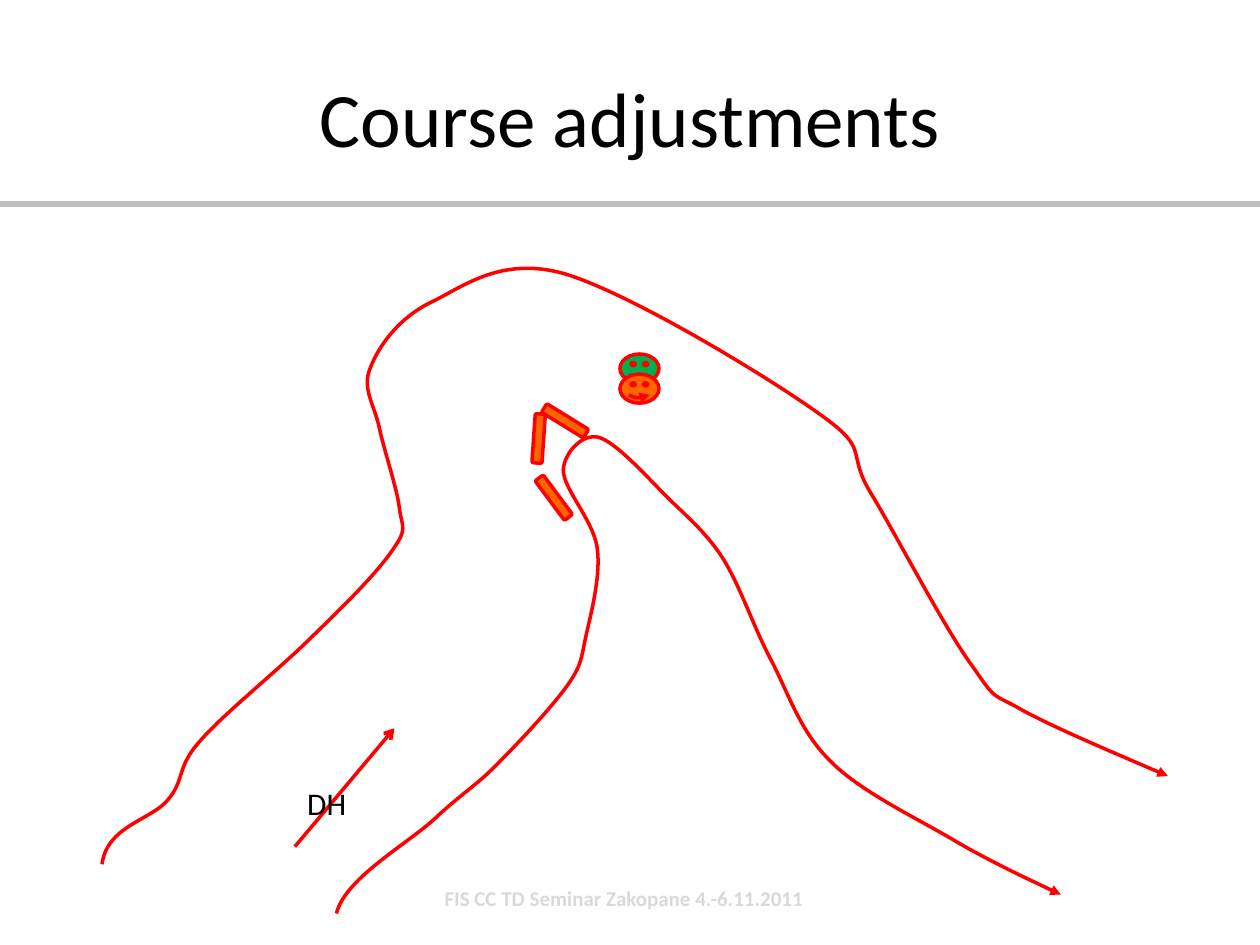
"""Build the course adjustments slide with its two course edges and barriers."""
import pptx
import pptx.dml.color
import pptx.enum.shapes
import pptx.enum.text
import pptx.oxml.ns
import pptx.util
import lxml.etree

WIDTH, HEIGHT = 10, 7.5
RED, ORANGE, GREEN, GREY = "FF0000", "FF6600", "00B050", "BFBFBF"
SHAPES = pptx.enum.shapes.MSO_SHAPE
RULE_TOP = 1.62

COURSE_EDGES = [
    [
        (0.81, 6.86),
        (0.85, 6.55), (1.21, 6.51), (1.34, 6.34),
        (1.47, 6.18), (1.4, 6.09), (1.59, 5.88),
        (1.77, 5.67), (2.22, 5.31), (2.47, 5.06),
        (2.73, 4.81), (3, 4.54), (3.12, 4.36),
        (3.24, 4.19), (3.19, 4.19), (3.17, 4.03),
        (3.15, 3.87), (3.05, 3.58), (3.01, 3.39),
        (2.97, 3.21), (2.87, 3.08), (2.94, 2.92),
        (3, 2.76), (3.15, 2.54), (3.4, 2.41),
        (3.66, 2.29), (3.96, 2.03), (4.47, 2.17),
        (4.99, 2.32), (6.11, 3), (6.51, 3.29),
        (6.92, 3.58), (6.71, 3.58), (6.91, 3.91),
        (7.11, 4.24), (7.51, 5.01), (7.72, 5.29),
        (7.92, 5.58), (7.86, 5.49), (8.12, 5.64),
        (8.38, 5.78), (8.83, 5.97), (9.27, 6.16),
    ],
    [
        (2.67, 7.25),
        (2.74, 6.96), (3.27, 6.68), (3.48, 6.47),
        (3.7, 6.27), (3.8, 6.22), (3.97, 6.04),
        (4.14, 5.87), (4.39, 5.6), (4.51, 5.43),
        (4.62, 5.27), (4.61, 5.23), (4.65, 5.05),
        (4.69, 4.87), (4.77, 4.57), (4.74, 4.35),
        (4.71, 4.13), (4.47, 3.88), (4.47, 3.73),
        (4.48, 3.59), (4.62, 3.44), (4.75, 3.47),
        (4.89, 3.51), (5.13, 3.78), (5.29, 3.94),
        (5.45, 4.1), (5.59, 4.21), (5.73, 4.42),
        (5.87, 4.64), (5.97, 4.95), (6.11, 5.22),
        (6.25, 5.48), (6.34, 5.79), (6.58, 6.03),
        (6.81, 6.27), (7.23, 6.47), (7.54, 6.65),
        (7.84, 6.83), (8.42, 7.1), (8.42, 7.1),
    ],
]
BARRIER_SIZE = (0.39, 0.08)
BARRIERS = [(4.2, 3.91, 53.3), (4.08, 3.44, 94), (4.29, 3.3, 31.6)]
OFFICIAL_SIZE = (0.31, 0.23)
OFFICIALS = [(4.92, 2.81, GREEN), (4.92, 2.97, ORANGE)]


def inches(*values):
    """Convert lengths in inches to slide units."""
    return [pptx.util.Inches(value) for value in values]


def color(hex_text):
    """Return the colour for a hex string."""
    return pptx.dml.color.RGBColor.from_string(hex_text)


def add_element(parent, name, **attributes):
    """Append a drawing element to a parent element."""
    return lxml.etree.SubElement(parent, pptx.oxml.ns.qn(name), attributes)


def style_line(line, hex_text, points=2, arrow=None):
    """Set a line's colour, width and end arrow."""
    line.color.rgb = color(hex_text)
    line.width = pptx.util.Pt(points)
    if arrow:
        add_element(line._get_or_add_ln(), "a:tailEnd", type=arrow)


def add_line(slide, start, end, hex_text, points=2, arrow=None):
    """Draw a straight line without a shadow."""
    connector = slide.shapes.add_connector(
        pptx.enum.shapes.MSO_CONNECTOR.STRAIGHT, *inches(*start, *end))
    style_line(connector.line, hex_text, points, arrow)
    add_element(connector._element.spPr, "a:effectLst")


def add_curve(slide, points):
    """Draw an open Bezier curve from a start point and triples of points."""
    start, *others = [inches(*point) for point in points]
    builder = slide.shapes.build_freeform(*start)
    builder.add_line_segments(others, close=False)
    shape = builder.convert_to_shape()
    outline = next(shape._element.iter(pptx.oxml.ns.qn("a:path")))
    segments = outline.findall(pptx.oxml.ns.qn("a:lnTo"))
    for first in range(0, len(segments), 3):
        curve = add_element(outline, "a:cubicBezTo")
        for segment in segments[first:first + 3]:
            curve.append(segment[0])
            outline.remove(segment)
    shape.shadow.inherit = False
    shape.fill.background()
    style_line(shape.line, RED, arrow="triangle")


def add_marker(slide, kind, position, size, fill, adjustment, rotation=0):
    """Draw a filled preset shape outlined in red."""
    shape = slide.shapes.add_shape(kind, *inches(*position, *size))
    shape.adjustments[0] = adjustment
    shape.rotation = rotation
    shape.shadow.inherit = False
    shape.fill.solid()
    shape.fill.fore_color.rgb = color(fill)
    style_line(shape.line, RED, arrow="triangle")


def add_text(slide, text, box, size, hex_text="000000", bold=False, title=False):
    """Write one paragraph, centred and wrapped when it is the title."""
    frame = slide.shapes.add_textbox(*inches(*box)).text_frame
    frame.word_wrap = title
    if title:
        frame.vertical_anchor = pptx.enum.text.MSO_ANCHOR.MIDDLE
    else:
        frame.auto_size = pptx.enum.text.MSO_AUTO_SIZE.SHAPE_TO_FIT_TEXT
    paragraph = frame.paragraphs[0]
    paragraph.text = text
    alignments = pptx.enum.text.PP_ALIGN
    paragraph.alignment = alignments.CENTER if title else alignments.LEFT
    paragraph.font.name = "Calibri"
    paragraph.font.size = pptx.util.Pt(size)
    paragraph.font.bold = bold
    paragraph.font.color.rgb = color(hex_text)


def main():
    """Build and save the slide."""
    presentation = pptx.Presentation()
    presentation.slide_width, presentation.slide_height = inches(WIDTH, HEIGHT)
    slide = presentation.slides.add_slide(presentation.slide_layouts[6])
    add_line(slide, (0, RULE_TOP), (WIDTH, RULE_TOP), GREY, points=3)
    add_text(slide, "FIS CC TD Seminar Zakopane 4.-6.11.2011",
             (3.43, 6.98, 3.09, 0.3), 12, hex_text="D9D9D9", bold=True)
    add_text(slide, "Course adjustments", (0.5, 0.3, WIDTH - 1, 1.25), 44, title=True)
    for points in COURSE_EDGES:
        add_curve(slide, points)
    for left, top, rotation in BARRIERS:
        add_marker(slide, SHAPES.ROUNDED_RECTANGLE, (left, top), BARRIER_SIZE,
                   ORANGE, 0.17, rotation)
    add_line(slide, (2.34, 6.72), (3.13, 5.78), RED, arrow="arrow")
    add_text(slide, "DH", (2.34, 6.17, 0.57, 0.4), 18)
    for left, top, fill in OFFICIALS:
        add_marker(slide, SHAPES.SMILEY_FACE, (left, top), OFFICIAL_SIZE, fill, 0.05)
    presentation.save("out.pptx")


if __name__ == "__main__":
    main()
